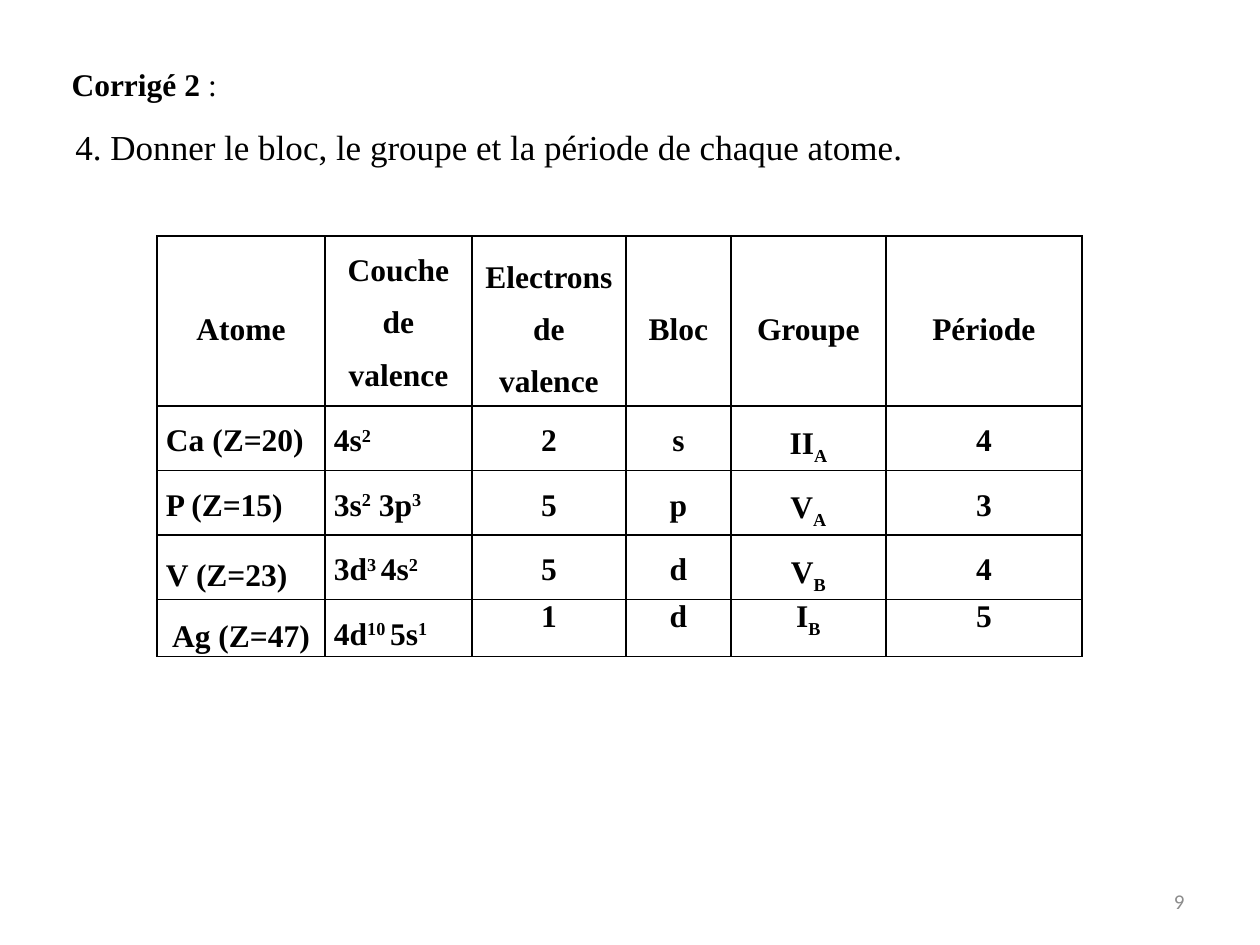
from lxml.etree import SubElement
from pptx import Presentation
from pptx.dml.color import RGBColor
from pptx.enum.text import MSO_ANCHOR, MSO_AUTO_SIZE, PP_ALIGN
from pptx.oxml import parse_xml
from pptx.oxml.ns import nsdecls, qn
from pptx.util import Emu, Pt

PX_PER_INCH = 126
COLORS = {"text": "000000", "number": "8C8C8C", "border": "000000"}
SERIF = "Times New Roman"
BASELINES = {"^": "30000", "_": "-25000"}

COLUMN_WIDTHS = [168, 147, 154, 105, 155, 196]
ROW_HEIGHTS = [157, 60, 60, 60, 52]
HEADERS = ["Atome", "Couche de valence", "Electrons de valence",
           "Bloc", "Groupe", "Période"]
# A part that starts with ^ is raised, one that starts with _ is lowered.
ATOMS = [
    ["Ca (Z=20)", ["4s", "^2"], "2", "s", ["II", "_A"], "4"],
    ["P (Z=15)", ["3s", "^2", " 3p", "^3"], "5", "p", ["V", "_A"], "3"],
    ["V (Z=23)", ["3d", "^3 ", "4s", "^2"], "5", "d", ["V", "_B"], "4"],
    ["Ag (Z=47)", ["4d", "^10 ", "5s", "^1"], "1", "d", ["I", "_B"], "5"],
]


def px(length):
    return Emu(round(length * 914400 / PX_PER_INCH))


def add_span(para, text, size=18, font=SERIF, color="text", bold=False):
    baseline = BASELINES.get(text[0])
    span = para.add_run()
    span.text = text[1:] if baseline else text
    span.font.size = Pt(size)
    span.font.name = font
    span.font.bold = bold
    span.font.color.rgb = RGBColor.from_string(COLORS[color])
    if baseline:
        span._r.get_or_add_rPr().set("baseline", baseline)


def set_borders(cell):
    properties = cell._tc.get_or_add_tcPr()
    for index, side in enumerate(("lnL", "lnR", "lnT", "lnB")):
        line = parse_xml(f'<a:{side} {nsdecls("a")} w="12700"/>')
        fill = SubElement(line, qn("a:solidFill"))
        SubElement(fill, qn("a:srgbClr"), val=COLORS["border"])
        properties.insert(index, line)


class SlideBuilder:
    def __init__(self, deck):
        self.page = deck.slides.add_slide(deck.slide_layouts[5])

    def fill_frame(self, box, spans, align=PP_ALIGN.LEFT, wrap=False):
        frame = box.text_frame
        frame.word_wrap = wrap
        frame.auto_size = MSO_AUTO_SIZE.NONE if wrap else MSO_AUTO_SIZE.SHAPE_TO_FIT_TEXT
        frame.vertical_anchor = MSO_ANCHOR.MIDDLE
        para = frame.paragraphs[0]
        para.alignment = align
        for text, style in spans:
            add_span(para, text, **style)

    def title(self, left, top, width, height, spans):
        box = self.page.shapes.title
        box.left, box.top, box.width, box.height = map(px, (left, top, width, height))
        self.fill_frame(box, spans)

    def text(self, left, top, width, height, text, align=PP_ALIGN.LEFT,
             wrap=False, **style):
        box = self.page.shapes.add_textbox(*map(px, (left, top, width, height)))
        self.fill_frame(box, [(text, style)], align, wrap)

    def table(self, left, top, widths, heights, rows):
        table = self.page.shapes.add_table(
            len(rows), len(widths),
            *map(px, (left, top, sum(widths), sum(heights)))).table
        table.first_row = table.horz_banding = False
        for column, width in zip(table.columns, widths):
            column.width = px(width)
        for row, height in zip(table.rows, heights):
            row.height = px(height)
        last = len(rows) - 1
        for r, row in enumerate(rows):
            for c, content in enumerate(row):
                centered = r == 0 or c > 1 or (r == last and c == 0)
                middle = (r == 0 and c != 1) or (r >= last - 1 and c == 0)
                self.cell(table.cell(r, c), content,
                          PP_ALIGN.CENTER if centered else PP_ALIGN.LEFT,
                          MSO_ANCHOR.MIDDLE if middle else MSO_ANCHOR.TOP,
                          spaced=r < last or c < 2)

    def cell(self, cell, content, align, anchor, spaced):
        cell.fill.background()
        set_borders(cell)
        cell.margin_left = cell.margin_right = px(9)
        cell.margin_top = cell.margin_bottom = 0
        cell.vertical_anchor = anchor
        para = cell.text_frame.paragraphs[0]
        para.alignment = align
        if spaced:
            para.line_spacing = 1.5
            para.space_before = para.space_after = Pt(6)
        for part in [content] if isinstance(content, str) else content:
            add_span(para, part, bold=True)


def main():
    deck = Presentation()
    deck.slide_width, deck.slide_height = px(1260), px(945)
    slide = SlideBuilder(deck)
    slide.title(59, 58, 173, 51, [("Corrigé 2", {"bold": True}), (" :", {})])
    slide.text(63, 119, 912, 55,
               "4. Donner le bloc, le groupe et la période de chaque atome.", size=20)
    slide.table(157, 236, COLUMN_WIDTHS, ROW_HEIGHTS, [HEADERS] + ATOMS)
    slide.text(903, 876, 294, 50, "9", align=PP_ALIGN.RIGHT, wrap=True,
               size=12, font="Calibri", color="number")
    deck.save("out.pptx")


if __name__ == "__main__":
    main()
